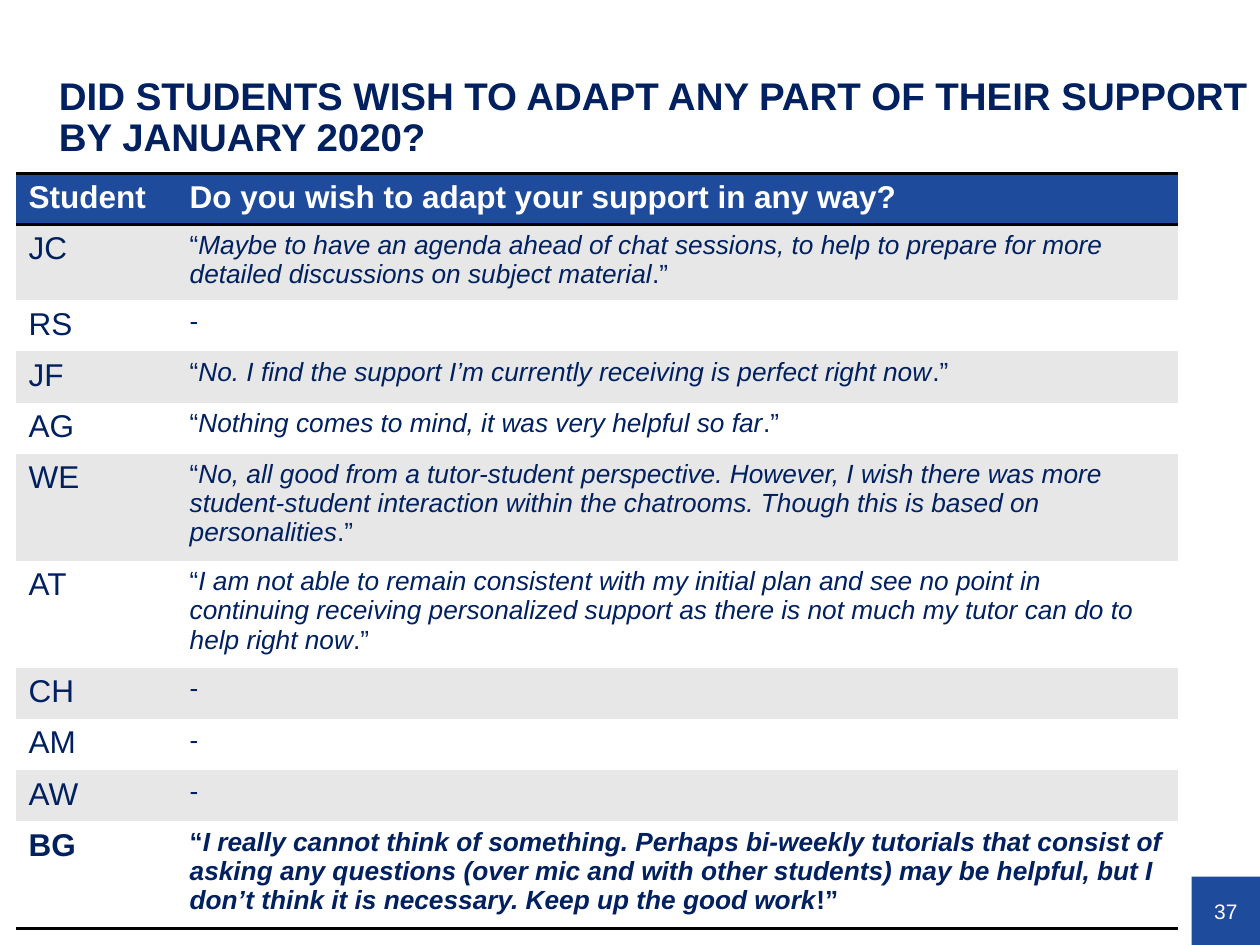
from pptx import Presentation
from pptx.dml.color import RGBColor
from pptx.enum.shapes import MSO_SHAPE
from pptx.enum.text import MSO_ANCHOR, PP_ALIGN
from pptx.oxml import parse_xml
from pptx.oxml.ns import nsdecls
from pptx.util import Pt

NAVY, BLUE, WHITE, GREY = "002060", "1E4B9B", "FFFFFF", "E7E7E7"


def color(code):
    return RGBColor.from_string(code)


def write(para, text, **style):
    run = para.add_run()
    run.text = text
    look = {"name": "Arial", "size": Pt(18), "bold": False, "italic": False}
    look.update(style)
    tint = look.pop("tint", NAVY)
    for key, value in look.items():
        setattr(run.font, key, value)
    run.font.color.rgb = color(tint)


deck = Presentation()
deck.slide_width, deck.slide_height = Pt(720), Pt(540)
slide = deck.slides.add_slide(deck.slide_layouts[6])

# Page number
badge = slide.shapes.add_shape(MSO_SHAPE.RECTANGLE, Pt(681), Pt(501), Pt(39), Pt(39))
badge.shadow.inherit = False
badge.fill.solid()
badge.fill.fore_color.rgb = color(BLUE)
badge.line.fill.background()
frame = badge.text_frame
for side in ("left", "top", "right", "bottom"):
    setattr(frame, f"margin_{side}", 0)
frame.vertical_anchor = MSO_ANCHOR.MIDDLE
frame.paragraphs[0].alignment = PP_ALIGN.CENTER
write(frame.paragraphs[0], "37", size=Pt(12), tint=WHITE)

# Title
title = slide.shapes.add_textbox(Pt(31), Pt(54.7), Pt(689), Pt(24.5))
frame = title.text_frame
layout = {"word_wrap": True, "vertical_anchor": MSO_ANCHOR.MIDDLE,
          "margin_left": Pt(2.7), "margin_top": Pt(1.4),
          "margin_right": 0, "margin_bottom": 0}
for key, value in layout.items():
    setattr(frame, key, value)
frame.paragraphs[0].line_spacing = 0.9
write(frame.paragraphs[0],
      "DID STUDENTS WISH TO ADAPT ANY PART OF THEIR SUPPORT BY JANUARY 2020?",
      size=Pt(22), bold=True)

# Answers: student, quote, closing mark
rows = [
    ("JC", "Maybe to have an agenda ahead of chat sessions, to help to prepare "
           "for more detailed discussions on subject material", ".”"),
    ("RS", "", ""),
    ("JF", "No. I find the support I’m currently receiving is perfect right now", ".”"),
    ("AG", "Nothing comes to mind, it was very helpful so far", ".”"),
    ("WE", "No, all good from a tutor-student perspective. However, I wish there "
           "was more student-student interaction within the chatrooms. Though "
           "this is based on personalities", ".”"),
    ("AT", "I am not able to remain consistent with my initial plan and see no "
           "point in continuing receiving personalized support as there is not "
           "much my tutor can do to help right now", ".”"),
    ("CH", "", ""),
    ("AM", "", ""),
    ("AW", "", ""),
    ("BG", "I really cannot think of something. Perhaps bi-weekly tutorials that "
           "consist of asking any questions (over mic and with other students) "
           "may be helpful, but I don’t think it is necessary. Keep up the good "
           "work", "!”"),
]

# Table
count = len(rows) + 1
table = slide.shapes.add_table(count, 2, Pt(9.2), Pt(99.2), Pt(664.2), Pt(29.2 * count)).table
for col, width in zip(table.columns, (92, 572.2)):
    col.width = Pt(width)
for row in table.rows:
    row.height = Pt(29.2)

# Header text
for cell, text in zip(table.rows[0].cells, ("Student", "Do you wish to adapt your support in any way?")):
    write(cell.text_frame.paragraphs[0], text, bold=True, tint=WHITE)

# Answer text
for num, (name, quote, end) in enumerate(rows, 1):
    first, second = (cell.text_frame.paragraphs[0] for cell in table.rows[num].cells)
    bold = name == "BG"
    write(first, name, bold=bold)
    if quote:
        write(second, "“", size=Pt(15), bold=bold)
        write(second, quote, size=Pt(15), bold=bold, italic=True)
        write(second, end, size=Pt(15), bold=bold)
    else:
        write(second, "-", size=Pt(15))

# Fills and rules
edges = {0: ("lnT", "lnB"), count - 1: ("lnB",)}
for num, row in enumerate(table.rows):
    for cell in row.cells:
        cell.fill.solid()
        cell.fill.fore_color.rgb = color(BLUE if num == 0 else GREY if num % 2 else WHITE)
        props = cell._tc.get_or_add_tcPr()
        for spot, tag in enumerate(("lnL", "lnR", "lnT", "lnB")):
            paint = "<a:noFill/>"
            if tag in edges.get(num, ()) or (num == 1 and tag == "lnT"):
                paint = '<a:solidFill><a:srgbClr val="000000"/></a:solidFill>'
            props.insert(spot, parse_xml(f'<a:{tag} {nsdecls("a")} w="{Pt(2)}">{paint}</a:{tag}>'))

deck.save("out.pptx")
